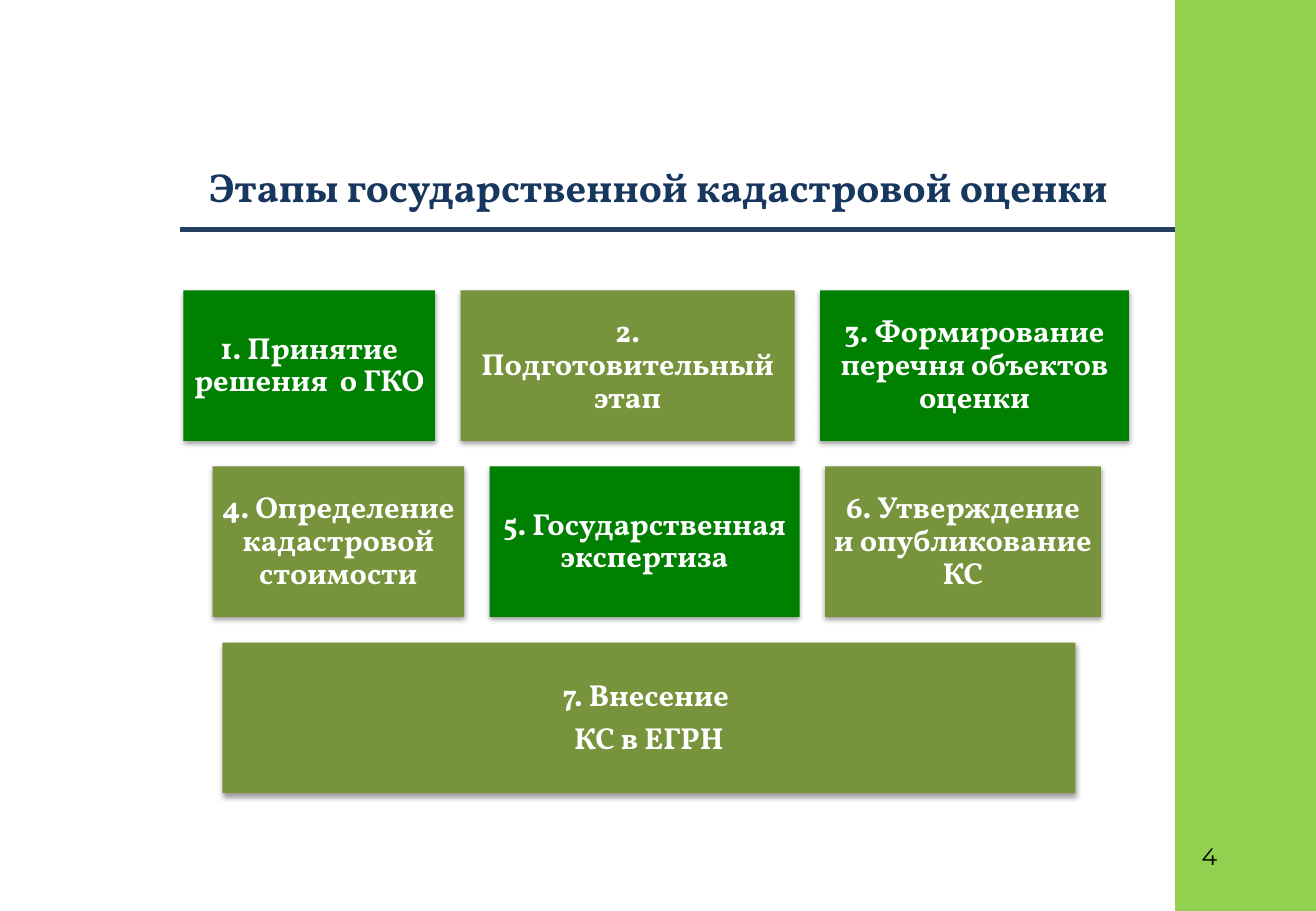
from lxml import etree
from pptx import Presentation
from pptx.dml.color import RGBColor
from pptx.enum.shapes import MSO_CONNECTOR, MSO_SHAPE
from pptx.enum.text import MSO_ANCHOR, MSO_AUTO_SIZE, PP_ALIGN
from pptx.oxml import parse_xml
from pptx.oxml.ns import nsdecls, qn
from pptx.util import Pt

PX = 9144  # 100 px to the inch
RECT = MSO_SHAPE.RECTANGLE
STRAIGHT = MSO_CONNECTOR.STRAIGHT
MIDDLE = MSO_ANCHOR.MIDDLE
CENTER = PP_ALIGN.CENTER
FIXED = MSO_AUTO_SIZE.NONE

WHITE = RGBColor(0xFF, 0xFF, 0xFF)
BLACK = RGBColor(0, 0, 0)
NAVY = RGBColor(0x17, 0x37, 0x5E)
RULE = RGBColor(0x25, 0x40, 0x61)
GREEN = RGBColor(0, 0x80, 0)
OLIVE = RGBColor(0x77, 0x93, 0x3C)
LIME = RGBColor(0x92, 0xD0, 0x50)

WIDE, HIGH = 1083, 750
EDGE = 967
TITLE = (148, 123, 787, 66)
STEPS = (151, 239)
STEP_H, GAP = 124, 21

# Left offset of each row, then (width, colour, text) of its steps
ROWS = [
    (0, [(207, GREEN, "1. Принятие решения  о ГКО"),
         (275, OLIVE, "2. Подготовительный этап"),
         (254, GREEN, "3. Формирование перечня объектов оценки")]),
    (24, [(207, OLIVE, "4. Определение кадастровой стоимости"),
          (255, GREEN, "5. Государственная экспертиза"),
          (227, OLIVE, "6. Утверждение и опубликование КС")]),
    (32, [(702, OLIVE, "7. Внесение \nКС в ЕГРН")]),
]

SHADOW = (
    f'<a:effectLst {nsdecls("a")}>'
    '<a:outerShdw blurRad="40000" dist="20000" dir="5400000" rotWithShape="0">'
    '<a:srgbClr val="000000"><a:alpha val="38000"/></a:srgbClr>'
    '</a:outerShdw></a:effectLst>'
)


def emu(*nums):
    return [n * PX for n in nums]


def write(frame, text, face, size, color, bold=True):
    frame.text = text
    for para in frame.paragraphs:
        para.line_spacing = 0.9
        for run in para.runs:
            font = run.font
            font.name, font.size, font.bold = face, Pt(size), bold
            font.color.rgb = color


def block(slide, box, color):
    shape = slide.shapes.add_shape(RECT, *emu(*box))
    shape.shadow.inherit = False
    shape.fill.solid()
    shape.fill.fore_color.rgb = color
    shape.line.fill.background()
    return shape


def head(slide, box):
    title = slide.shapes.title
    title.left, title.top, title.width, title.height = emu(*box)
    frame = title.text_frame
    frame.auto_size = FIXED
    frame.vertical_anchor = MIDDLE
    write(frame, "Этапы государственной кадастровой оценки", "Vollkorn", 24, NAVY)
    frame.paragraphs[0].alignment = CENTER


def step(slide, box, color, text):
    shape = block(slide, box, color)
    props = shape._element.spPr
    props.replace(props.find(qn("a:effectLst")), parse_xml(SHADOW))
    frame = shape.text_frame
    frame.word_wrap = True
    frame.vertical_anchor = MIDDLE
    frame.margin_left = frame.margin_right = 7 * PX
    frame.margin_top = frame.margin_bottom = 7 * PX
    write(frame, text, "Vollkorn", 18, WHITE)
    for para in frame.paragraphs:
        para.alignment = CENTER
        para.space_after = Pt(6)


def steps(slide, left, top):
    for row, (shift, items) in enumerate(ROWS):
        x, y = left + shift, top + row * (STEP_H + GAP)
        for width, color, text in items:
            step(slide, (x, y, width, STEP_H), color, text)
            x += width + GAP


def rule(slide, x1, x2, y):
    line = slide.shapes.add_connector(STRAIGHT, *emu(x1, y, x2, y))
    line.line.color.rgb = RULE
    line.line.width = Pt(3)
    etree.SubElement(line._element.spPr, qn("a:effectLst"))


def side(slide, box):
    """Draw the side band with the slide number near its foot."""
    left, top, _, height = box
    block(slide, box, LIME)
    note = slide.shapes.add_textbox(*emu(left + 12, top + height - 62, 64, 34))
    note.text_frame.word_wrap = True
    write(note.text_frame, "4", "Montserrat", 14, BLACK, False)
    note.text_frame.paragraphs[0].line_spacing = 1.0


def main():
    deck = Presentation()
    deck.slide_width, deck.slide_height = emu(WIDE, HIGH)
    slide = deck.slides.add_slide(deck.slide_layouts[5])
    head(slide, TITLE)
    steps(slide, *STEPS)
    side(slide, (EDGE, 0, WIDE - EDGE, HIGH))
    rule(slide, TITLE[0], EDGE, TITLE[1] + TITLE[3])
    deck.save("out.pptx")


if __name__ == "__main__":
    main()
